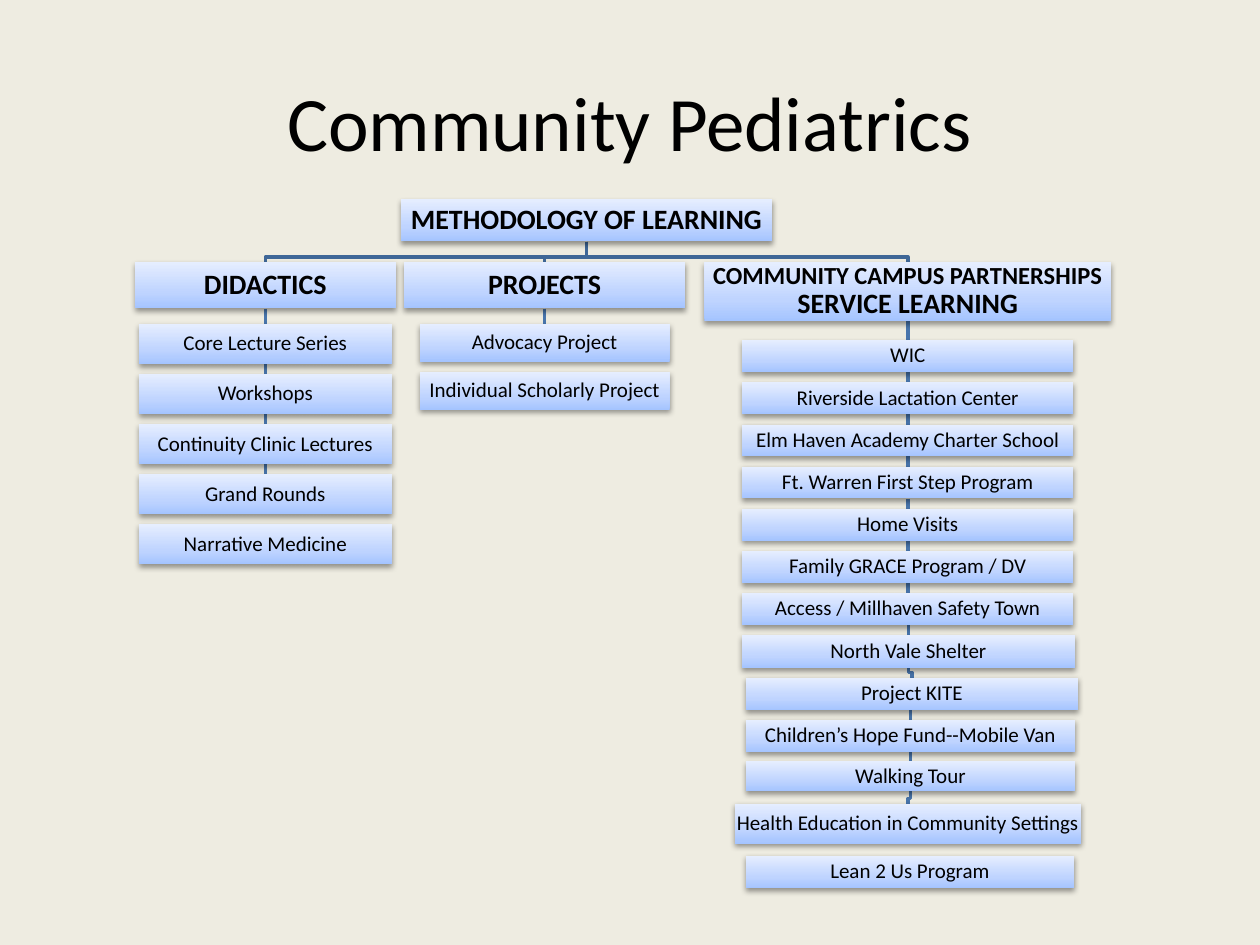
"""Build the Community Pediatrics learning methods chart."""
import copy

import lxml.etree
import pptx
import pptx.dml.color
import pptx.enum.shapes
import pptx.enum.text
import pptx.oxml.ns
import pptx.util

Cm = pptx.util.Cm
qn = pptx.oxml.ns.qn
COLORS = {"background": "EEECE1", "text": "000000", "trunk": "3F6797", "link": "4875AC",
          "low": "A4C4FF", "middle": "BFD4FF", "high": "E6EEFF"}
RGB = {name: pptx.dml.color.RGBColor.from_string(code) for name, code in COLORS.items()}


def write(box, spans, bold=False, spacing=0.9, inset=0.03):
    """Fill a box with centred spans of (text, size)."""
    frame = box.text_frame
    frame.word_wrap = True
    frame.vertical_anchor = pptx.enum.text.MSO_ANCHOR.MIDDLE
    frame.margin_left = frame.margin_right = Cm(inset)
    frame.margin_top = frame.margin_bottom = Cm(inset)
    para = frame.paragraphs[0]
    para.alignment = pptx.enum.text.PP_ALIGN.CENTER
    para.line_spacing = spacing
    for text, size in spans:
        span = para.add_run()
        span.text = text
        span.font.name = "Calibri"
        span.font.size = pptx.util.Pt(size)
        span.font.bold = bold
        span.font.color.rgb = RGB["text"]


def link(page, upper, lower, color):
    """Join two (left, top, width, height) places, bending just above the lower one."""
    start, end = upper[0] + upper[2] / 2, lower[0] + lower[2] / 2
    top, bottom = upper[1] + upper[3], lower[1]
    if abs(start - end) < 0.02:
        line = page.shapes.add_connector(pptx.enum.shapes.MSO_CONNECTOR.STRAIGHT,
                                         Cm(start), Cm(top), Cm(start), Cm(bottom))
    else:
        bend = bottom - 0.1
        builder = page.shapes.build_freeform(Cm(start), Cm(top))
        corners = [(start, bend), (end, bend), (end, bottom)]
        builder.add_line_segments([(Cm(x), Cm(y)) for x, y in corners], close=False)
        line = builder.convert_to_shape()
        line.fill.background()
    line.line.color.rgb = RGB[color]
    line.line.width = pptx.util.Pt(2)
    lxml.etree.SubElement(line._element.spPr, qn("a:effectLst"))


deck = pptx.Presentation()
deck.slide_width, deck.slide_height = Cm(25.4), Cm(19.05)
page = deck.slides.add_slide(deck.slide_layouts[6])
page.background.fill.solid()
page.background.fill.fore_color.rgb = RGB["background"]

title = page.shapes.add_textbox(Cm(1.9), Cm(0.84), Cm(21.6), Cm(3.18))
write(title, [("Community Pediatrics", 44)], spacing=1, inset=0.2)

root = (8.08, 4.01, 7.49, 0.86)
boxes = [(root, [("METHODOLOGY OF LEARNING", 16)], True)]

branches = [
    {"heading": [("DIDACTICS", 16)], "place": (2.72, 5.28, 5.26, 0.94),
     "first": (2.8, 6.53, 5.1, 0.81), "pitch": 1.01, "linked": 4, "special": {},
     "items": ["Core Lecture Series", "Workshops", "Continuity Clinic Lectures",
               "Grand Rounds", "Narrative Medicine"]},
    {"heading": [("PROJECTS", 16)], "place": (8.15, 5.28, 5.66, 0.94),
     "first": (8.46, 6.53, 5.04, 0.76), "pitch": 0.97, "linked": 1, "special": {},
     "items": ["Advocacy Project", "Individual Scholarly Project"]},
    {"heading": [("COMMUNITY CAMPUS PARTNERSHIPS ", 14), ("SERVICE LEARNING", 16)],
     "place": (14.2, 5.28, 8.2, 1.19),
     "first": (14.96, 6.86, 6.68, 0.64), "pitch": 0.85, "linked": 11,
     "special": {7: (14.96, 12.81, 6.71, 0.66), 8: (15.03, 13.66, 6.71, 0.66),
                 9: (15.03, 14.51, 6.65, 0.66), 10: (15.03, 15.35, 6.65, 0.6),
                 11: (14.81, 16.2, 6.98, 0.81), 12: (15.03, 17.25, 6.63, 0.66)},
     "items": ["WIC", "Riverside Lactation Center", "Elm Haven Academy Charter School",
               "Ft. Warren First Step Program", "Home Visits", "Family GRACE Program / DV",
               "Access / Millhaven Safety Town", "North Vale Shelter", "Project KITE",
               "Children’s Hope Fund--Mobile Van", "Walking Tour",
               "Health Education in Community Settings", "Lean 2 Us Program"]},
]

for branch in branches:
    left, top, width, height = branch["first"]
    places = [branch["special"].get(row, (left, top + row * branch["pitch"], width, height))
              for row in range(len(branch["items"]))]
    link(page, root, branch["place"], "trunk")
    chain = [branch["place"]] + places[:branch["linked"]]
    for upper, lower in zip(chain, chain[1:]):
        centre = lower[0] + lower[2] / 2
        if abs(centre - upper[0] - upper[2] / 2) < 0.05:
            upper = (centre, upper[1], 0, upper[3])
        link(page, upper, lower, "link")
    if branch["linked"] == 11:
        link(page, places[9], places[11], "link")
    boxes.append((branch["place"], branch["heading"], True))
    boxes += [(place, [(item, 12)], False) for place, item in zip(places, branch["items"])]

for place, spans, bold in boxes:
    box = page.shapes.add_shape(pptx.enum.shapes.MSO_SHAPE.RECTANGLE, *map(Cm, place))
    box.line.fill.background()
    box.fill.gradient()
    box.fill.gradient_angle = 90
    stop_list = box._element.spPr.find(".//" + qn("a:gsLst"))
    stop_list.append(copy.deepcopy(stop_list[0]))
    stops = zip(box.fill.gradient_stops, [0, 0.35, 1], ["low", "middle", "high"])
    for stop, position, color in stops:
        stop.position = position
        stop.color.rgb = RGB[color]
    box.shadow.inherit = False
    effects = box._element.spPr.find(qn("a:effectLst"))
    shadow = lxml.etree.SubElement(effects, qn("a:outerShdw"), blurRad="40000",
                                   dist="20000", dir="5400000", rotWithShape="0")
    shade = lxml.etree.SubElement(shadow, qn("a:srgbClr"), val=COLORS["text"])
    lxml.etree.SubElement(shade, qn("a:alpha"), val="38000")
    write(box, spans, bold)

deck.save("out.pptx")
